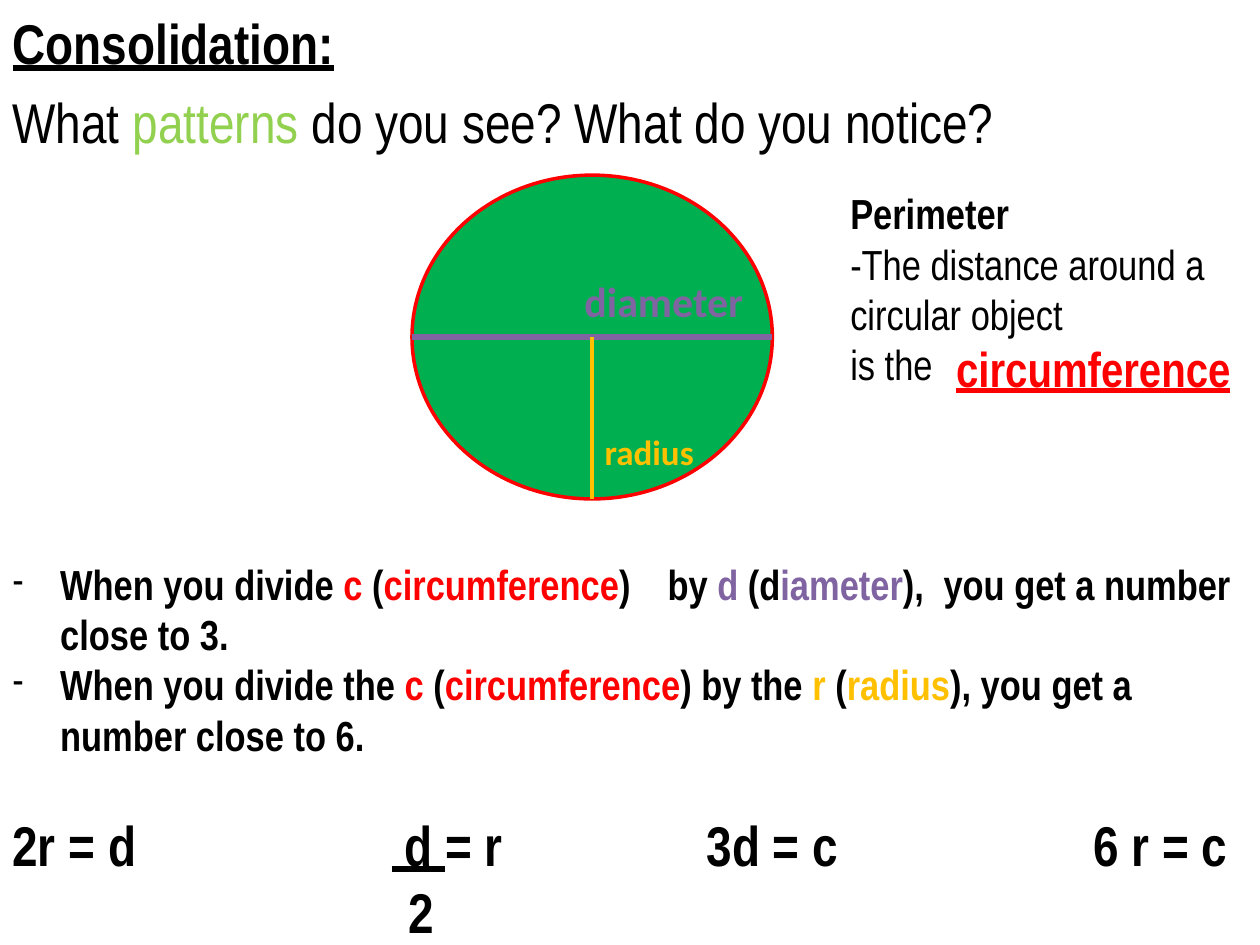
"""Build a slide on the patterns between circumference, diameter and radius."""
from lxml import etree
from pptx import Presentation
from pptx import util as u
from pptx.dml.color import RGBColor
from pptx.enum import shapes, text
from pptx.oxml import ns

BLACK = RGBColor(0x00, 0x00, 0x00)
RED = RGBColor(0xFF, 0x00, 0x00)
GREEN = RGBColor(0x00, 0xB0, 0x50)
LIME = RGBColor(0x92, 0xD0, 0x50)
PURPLE = RGBColor(0x80, 0x64, 0xA2)
GOLD = RGBColor(0xFF, 0xC0, 0x00)
WIDTH, HEIGHT = 10, 7.5
INDENT = 0.38
CIRCLE = (3.27, 1.39, 2.86, 2.57)


def lengths(*values):
    """Turn inches into slide lengths."""
    return [u.Inches(value) for value in values]


def write(paragraph, words, color=BLACK, size=24, bold=True, underline=False,
          font="Arial Narrow"):
    """Append formatted words to a paragraph, with a line break at each newline."""
    for number, line in enumerate(words.split("\n")):
        if number:
            paragraph.add_line_break()
        run = paragraph.add_run()
        run.text = line
        run.font.name, run.font.size = font, u.Pt(size)
        run.font.bold, run.font.underline = bold, underline
        run.font.color.rgb = color


def write_parts(paragraph, parts, **style):
    """Write a sequence of (words, color) parts in one style."""
    for words, color in parts:
        write(paragraph, words, color, **style)


def add_tabs(paragraph, *stops):
    """Set left tab stops, in inches from the text edge."""
    tabs = etree.SubElement(paragraph._p.get_or_add_pPr(), ns.qn("a:tabLst"))
    for stop in stops:
        etree.SubElement(tabs, ns.qn("a:tab"), pos=str(u.Inches(stop)), algn="l")


def add_dash(paragraph):
    """Give a paragraph a hanging dash bullet."""
    properties = paragraph._p.get_or_add_pPr()
    properties.set("marL", str(u.Inches(INDENT)))
    properties.set("indent", str(-u.Inches(INDENT)))
    etree.SubElement(properties, ns.qn("a:buFont"), typeface="Arial Narrow")
    etree.SubElement(properties, ns.qn("a:buChar"), char="-")


def add_text(slide, box, wrap=False):
    """Add a text box and return its frame."""
    frame = slide.shapes.add_textbox(*lengths(*box)).text_frame
    frame.word_wrap = wrap
    return frame


def add_label(slide, box, words, **style):
    """Add a one-line label."""
    write(add_text(slide, box).paragraphs[0], words, **style)


def add_line(slide, start, end, color, width):
    """Add a straight line without a shadow."""
    line = slide.shapes.add_connector(
        shapes.MSO_CONNECTOR.STRAIGHT, *lengths(*start, *end))
    line.line.color.rgb, line.line.width = color, u.Pt(width)
    etree.SubElement(line._element.spPr, ns.qn("a:effectLst"))


def add_heading(slide):
    """Fill the title with the heading and its question."""
    title = slide.shapes.title
    title.left, title.top, title.width, title.height = lengths(0, 0.02, WIDTH, 1.3)
    frame = title.text_frame
    frame.auto_size = text.MSO_AUTO_SIZE.NONE
    frame.vertical_anchor = text.MSO_ANCHOR.TOP
    heading, question = frame.paragraphs[0], frame.add_paragraph()
    for paragraph in (heading, question):
        paragraph.alignment = text.PP_ALIGN.LEFT
        paragraph.space_before = u.Pt(6.4)
    write(heading, "Consolidation:", size=32, underline=True)
    write_parts(question, [("What ", BLACK), ("patterns", LIME),
                           (" do you see? What do you notice?", BLACK)],
                size=32, bold=False)


def add_circle(slide):
    """Draw the circle with its diameter and radius."""
    left, top, width, height = CIRCLE
    center, middle = left + width / 2, top + height / 2
    circle = slide.shapes.add_shape(shapes.MSO_SHAPE.OVAL, *lengths(*CIRCLE))
    circle.shadow.inherit = False
    circle.fill.solid()
    circle.fill.fore_color.rgb = GREEN
    circle.line.color.rgb, circle.line.width = RED, u.Pt(2)
    add_line(slide, (left, middle), (left + width, middle), PURPLE, 3.5)
    add_label(slide, (4.54, 2.14, 1.48, 0.5), "diameter", color=PURPLE, font="Calibri")
    add_line(slide, (center, middle), (center, top + height), GOLD, 2.5)
    add_label(slide, (center, 3.37, 0.92, 0.44), "radius", color=GOLD, size=20,
              font="Calibri")


def add_definition(slide):
    """Define the perimeter of a circle."""
    frame = add_text(slide, (6.65, 1.44, 3.13, 1.72))
    write(frame.paragraphs[0], "Perimeter")
    write(frame.add_paragraph(), "-The distance around a \ncircular object \nis the",
          bold=False)
    add_label(slide, (7.49, 2.64, 2.4, 0.57), "circumference", color=RED, size=28,
              underline=True)


def add_findings(slide):
    """List the findings and the formulas below them."""
    frame = add_text(slide, (0, 4.38, WIDTH, HEIGHT - 4.3), wrap=True)
    by_diameter, by_radius = frame.paragraphs[0], frame.add_paragraph()
    add_dash(by_diameter)
    add_tabs(by_diameter, 5.2, 7.39)
    write_parts(by_diameter, [
        ("When you divide ", BLACK), ("c", RED), (" (", BLACK), ("circumference", RED),
        (")\tby ", BLACK), ("d", PURPLE), (" (d", BLACK), ("iameter", PURPLE),
        ("),\tyou get a number close to 3.", BLACK)])
    add_dash(by_radius)
    write_parts(by_radius, [
        ("When you divide the ", BLACK), ("c", RED), (" (", BLACK),
        ("circumference", RED), (") by the ", BLACK), ("r ", GOLD), ("(", BLACK),
        ("radius", GOLD), ("), you get a number close to 6.", BLACK)])
    formulas, denominator = frame.add_paragraph(), frame.add_paragraph()
    formulas.space_before = u.Pt(28.8)
    add_tabs(formulas, 3.01, 5.51, 8.58)
    write(formulas, "2r = d\t", size=32)
    write(formulas, " d ", size=32, underline=True)
    write(formulas, "= r\t3d = c\t6 r = c", size=32)
    add_tabs(denominator, 3.14)
    write(denominator, "\t2", size=32)


def main():
    """Build and save the slide."""
    deck = Presentation()
    deck.slide_width, deck.slide_height = lengths(WIDTH, HEIGHT)
    slide = deck.slides.add_slide(deck.slide_layouts[5])
    add_heading(slide)
    add_circle(slide)
    add_definition(slide)
    add_findings(slide)
    deck.save("out.pptx")


if __name__ == "__main__":
    main()
